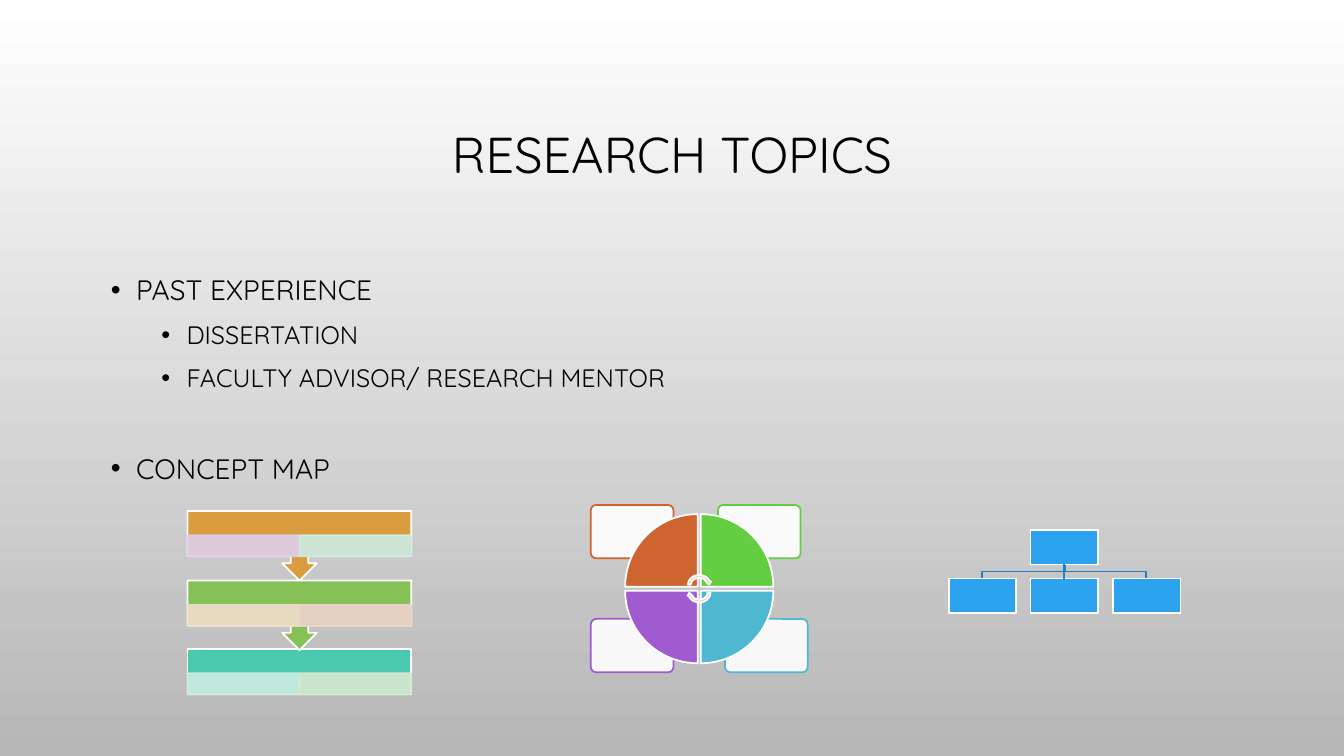
"""Build the research topics slide with three small concept diagrams."""
from lxml import etree
from pptx import Presentation
from pptx.dml.color import RGBColor
from pptx.enum.shapes import MSO_CONNECTOR, MSO_SHAPE
from pptx.enum.text import MSO_ANCHOR, MSO_AUTO_SIZE, PP_ALIGN
from pptx.oxml.ns import qn
from pptx.util import Pt

PX = 9144
FONT = "Quicksand"
BLACK = RGBColor(0x00, 0x00, 0x00)
WHITE = RGBColor(0xFF, 0xFF, 0xFF)
GRAY = RGBColor(0xB7, 0xB7, 0xB7)
BLUE = RGBColor(0x2C, 0xA3, 0xEE)
DARK_BLUE = RGBColor(0x22, 0x81, 0xBC)
TEAL = RGBColor(0x4A, 0xCA, 0xAD)
LEAF = RGBColor(0x86, 0xC1, 0x57)
OCHRE = RGBColor(0xD9, 0x9C, 0x3F)
PALE_TEAL = RGBColor(0xCD, 0xEC, 0xE2)
PALE_GREEN = RGBColor(0xD8, 0xE9, 0xD0)
PALE_SAND = RGBColor(0xF1, 0xDE, 0xCD)
PALE_ROSE = RGBColor(0xED, 0xD2, 0xCC)
PALE_LILAC = RGBColor(0xE0, 0xCF, 0xEE)
RUST = RGBColor(0xCE, 0x64, 0x30)
GREEN = RGBColor(0x63, 0xCE, 0x3F)
CYAN = RGBColor(0x4D, 0xB8, 0xCF)
PURPLE = RGBColor(0xA1, 0x5B, 0xD0)


def add_box(shapes, kind, box, fill, line=WHITE, rotation=0):
    sp = shapes.add_shape(kind, *(v * PX for v in box))
    sp.shadow.inherit = False
    sp.fill.solid()
    sp.fill.fore_color.rgb = fill
    sp.line.color.rgb = line
    sp.line.width = Pt(1.25)
    sp.rotation = rotation
    return sp


def fade(sp, count):
    for color in list(sp._element.spPr.iter(qn("a:srgbClr")))[:count]:
        etree.SubElement(color, qn("a:alpha"), val="90000")


prs = Presentation()
prs.slide_width, prs.slide_height = 1333 * PX, 750 * PX
slide = prs.slides.add_slide(prs.slide_layouts[1])
bg = slide.background.fill
bg.gradient()
bg.gradient_angle = 270
for stop, color, position in zip(bg.gradient_stops, (WHITE, GRAY), (0, 1)):
    stop.color.rgb = color
    stop.position = position

title, body = slide.placeholders
for sp, top, height in ((title, 68, 175), (body, 259, 374)):
    sp.left, sp.top, sp.width, sp.height = 100 * PX, top * PX, 1133 * PX, height * PX
    sp.text_frame.auto_size = MSO_AUTO_SIZE.NONE
    sp.text_frame.word_wrap = True

tf = title.text_frame
tf.vertical_anchor = MSO_ANCHOR.MIDDLE
tf.text = "RESEARCH TOPICS"
p = tf.paragraphs[0]
p.alignment = PP_ALIGN.CENTER
p.line_spacing = 0.9
r = p.runs[0]
r.font.name, r.font.size, r.font.color.rgb = FONT, Pt(36), BLACK

topics = [
    ("PAST EXPERIENCE", 0, 0),
    ("DISSERTATION", 1, 5),
    ("FACULTY ADVISOR/ RESEARCH MENTOR", 1, 5),
    ("CONCEPT MAP", 0, 37),
]
tf = body.text_frame
tf.vertical_anchor = MSO_ANCHOR.TOP
for i, (text, level, before) in enumerate(topics):
    p = tf.paragraphs[0] if i == 0 else tf.add_paragraph()
    p.text = text
    p.level = level
    pPr = p._p.get_or_add_pPr()
    pPr.set("marL", str((25 + 50 * level) * PX))
    pPr.set("indent", str(-25 * PX))
    etree.SubElement(pPr, qn("a:buFont"), typeface="Arial")
    etree.SubElement(pPr, qn("a:buChar"), char="•")
    p.alignment = PP_ALIGN.LEFT
    p.line_spacing = 1.2
    p.space_before = Pt(before)
    p.space_after = Pt(0)
    r = p.runs[0]
    r.font.name, r.font.size, r.font.color.rgb = FONT, Pt(20 - 2 * level), BLACK

tree = slide.shapes.add_group_shape().shapes
for x in (974, 1137):
    builder = tree.build_freeform(1056, 560, scale=PX)
    builder.add_line_segments([(1056, 567), (x, 567), (x, 574)], close=False)
    branch = builder.convert_to_shape()
    branch.shadow.inherit = False
    branch.fill.background()
    branch.line.color.rgb = DARK_BLUE
    branch.line.width = Pt(1.25)
parent = add_box(tree, MSO_SHAPE.RECTANGLE, (1022, 526, 67, 34), BLUE)
children = [add_box(tree, MSO_SHAPE.RECTANGLE, (x, 574, 67, 34), BLUE)
            for x in (941, 1022, 1104)]
stem = tree.add_connector(MSO_CONNECTOR.STRAIGHT, 0, 0, 0, 0)
stem.begin_connect(parent, 2)
stem.end_connect(children[1], 0)
stem.line.color.rgb = DARK_BLUE
stem.line.width = Pt(1.25)
etree.SubElement(stem._element.spPr, qn("a:effectLst"))

steps = [
    (644, 45, TEAL, (PALE_TEAL, PALE_GREEN)),
    (576, 69, LEAF, (PALE_SAND, PALE_ROSE)),
    (507, 69, OCHRE, (PALE_LILAC, PALE_TEAL)),
]
process = slide.shapes.add_group_shape().shapes
for top, height, color, cell_colors in steps:
    if color == TEAL:
        add_box(process, MSO_SHAPE.RECTANGLE, (186, top, 222, height), color)
    else:
        callout = add_box(process, MSO_SHAPE.UP_ARROW_CALLOUT,
                          (186, top, 222, height), color, rotation=180)
        for i, value in enumerate((0.25, 0.25, 0.25, 0.65)):
            callout.adjustments[i] = value
    for i, cell_color in enumerate(cell_colors):
        cell = add_box(process, MSO_SHAPE.RECTANGLE,
                       (186 + 111 * i, top + 24, 111, 21), cell_color, cell_color)
        fade(cell, 2)

cycle = slide.shapes.add_group_shape().shapes
for left, top, color in ((719, 614, CYAN), (586, 614, PURPLE),
                         (712, 501, GREEN), (586, 501, RUST)):
    panel = add_box(cycle, MSO_SHAPE.ROUNDED_RECTANGLE, (left, top, 82, 53), WHITE, color)
    panel.adjustments[0] = 0.1
    fade(panel, 1)
quadrants = ((620, 510, RUST), (695, 510, GREEN), (695, 586, CYAN), (620, 586, PURPLE))
for i, (left, top, color) in enumerate(quadrants):
    add_box(cycle, MSO_SHAPE.PIE_WEDGE, (left, top, 72, 72), color, rotation=90 * i)
for top, rotation in ((569, 0), (577, 180)):
    add_box(cycle, MSO_SHAPE.CIRCULAR_ARROW, (681, top, 25, 22), PALE_ROSE,
            rotation=rotation)

prs.save("out.pptx")
